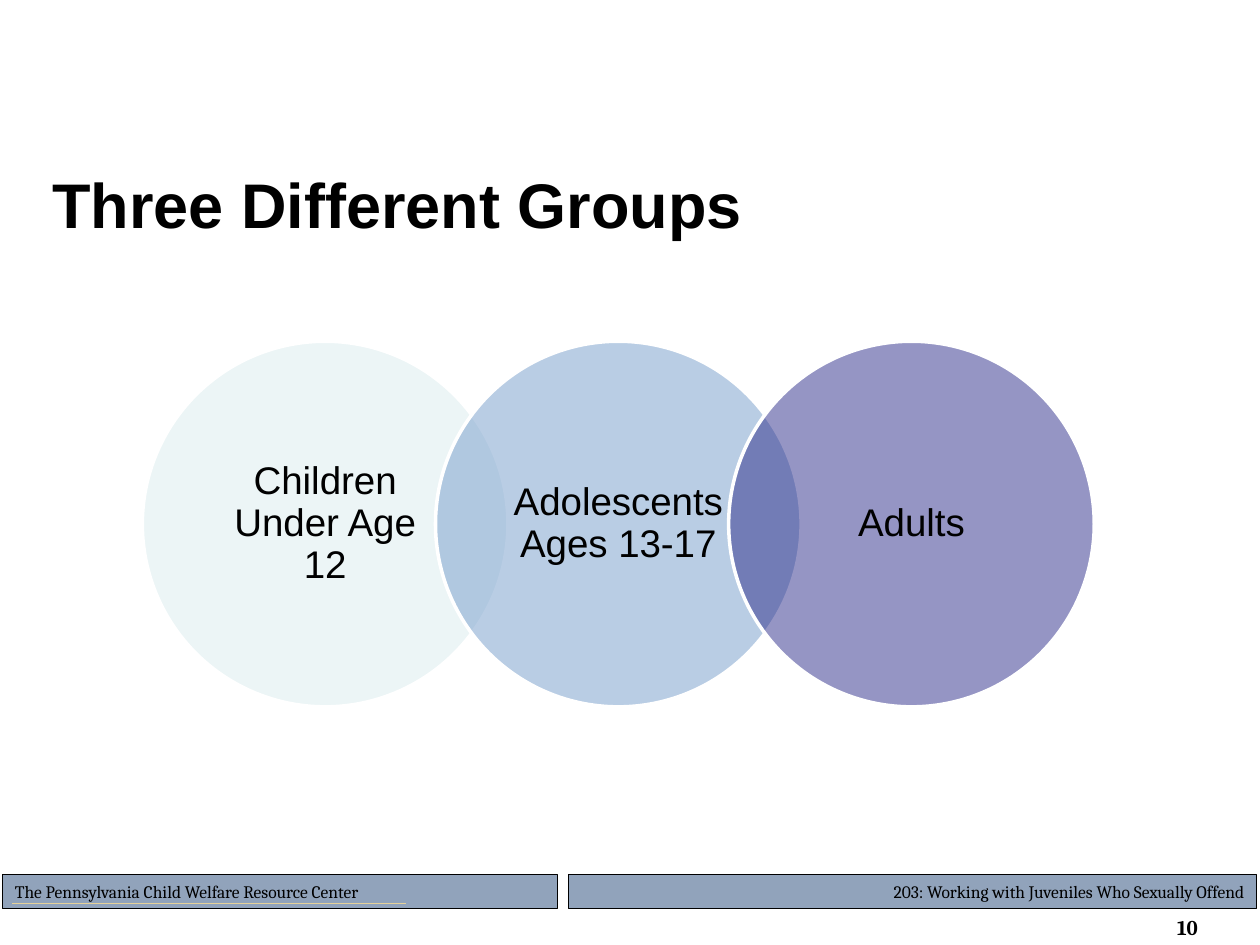
from math import sqrt

from lxml.etree import SubElement
from pptx import Presentation
from pptx.dml.color import RGBColor
from pptx.enum.shapes import MSO_CONNECTOR, MSO_SHAPE
from pptx.enum.text import MSO_ANCHOR, PP_ALIGN
from pptx.oxml.ns import qn
from pptx.util import Cm, Pt

BLACK = RGBColor(0x00, 0x00, 0x00)
WHITE = RGBColor(0xFF, 0xFF, 0xFF)
SLATE = RGBColor(0x91, 0xA3, 0xBB)
SAND = RGBColor(0xE5, 0xD1, 0x99)
MINT = RGBColor(0xDA, 0xED, 0xEF)
BLUE = RGBColor(0x75, 0x9C, 0xCB)
INDIGO = RGBColor(0x2D, 0x2D, 0x8A)


class SlideBuilder:
    heading_font = "Arial"
    footer_font = "Cambria"

    def __init__(self, slide):
        self.s = slide

    def set_text(self, sp, text, font, size, bold=False, align=PP_ALIGN.LEFT,
                 anchor=MSO_ANCHOR.TOP):
        tf = sp.text_frame
        tf.word_wrap = True
        tf.vertical_anchor = anchor
        p = tf.paragraphs[0]
        p.text = text
        p.alignment = align
        p.font.name = font
        p.font.size = Pt(size)
        p.font.bold = bold
        p.font.color.rgb = BLACK
        return tf

    def text(self, x, y, w, h, *args, **style):
        sp = self.s.shapes.add_textbox(Cm(x), Cm(y), Cm(w), Cm(h))
        return self.set_text(sp, *args, **style)

    def shape(self, kind, x, y, w, h, fill, line, width):
        sp = self.s.shapes.add_shape(kind, Cm(x), Cm(y), Cm(w), Cm(h))
        sp.shadow.inherit = False
        sp.fill.solid()
        sp.fill.fore_color.rgb = fill
        sp.line.color.rgb = line
        sp.line.width = Pt(width)
        return sp

    def bar(self, x, w, text, align, width):
        sp = self.shape(MSO_SHAPE.RECTANGLE, x, 17.63, w, 0.69, SLATE, BLACK, width)
        self.set_text(sp, text, self.footer_font, 10, align=align)

    def line(self, x1, x2, y, color):
        c = self.s.shapes.add_connector(MSO_CONNECTOR.STRAIGHT,
                                        Cm(x1), Cm(y), Cm(x2), Cm(y))
        c.line.color.rgb = color
        c.line.width = Pt(0.75)
        SubElement(c._element.spPr, qn("a:effectLst"))

    def circle(self, x, y, d, fill, label):
        sp = self.shape(MSO_SHAPE.OVAL, x, y, d, d, fill, WHITE, 2)
        color = sp._element.spPr.find(qn("a:solidFill"))[0]
        SubElement(color, qn("a:alpha"), val="50000")
        # The label fills the square inscribed in the circle
        side = d / sqrt(2)
        gap = (d - side) / 2
        tf = self.text(x + gap, y + gap, side, side, label, self.heading_font, 22,
                       align=PP_ALIGN.CENTER, anchor=MSO_ANCHOR.MIDDLE)
        tf.margin_left = tf.margin_right = Cm(0.4)
        tf.margin_top = tf.margin_bottom = Cm(0.08)
        tf.paragraphs[0].line_spacing = 0.9


def main():
    prs = Presentation()
    prs.slide_width, prs.slide_height = Cm(25.4), Cm(19.05)
    b = SlideBuilder(prs.slides.add_slide(prs.slide_layouts[6]))

    # Footer
    b.bar(11.46, 13.87, "203: Working with Juveniles Who Sexually Offend",
          PP_ALIGN.RIGHT, 0.75)
    b.bar(0.05, 11.18, "The Pennsylvania Child Welfare Resource Center",
          PP_ALIGN.LEFT, 0.5)
    b.line(0.25, 8.18, 18.21, SAND)
    number = b.text(22.38, 18.31, 2.41, 0.76, "10", b.footer_font, 12,
                    bold=True, align=PP_ALIGN.RIGHT)
    number.margin_right = Cm(0.64)

    # Title
    b.text(0.81, 3.12, 18.39, 1.96, "Three Different Groups", b.heading_font, 36,
           bold=True, anchor=MSO_ANCHOR.MIDDLE)

    # Overlapping circles
    groups = [("Children Under Age 12", MINT),
              ("Adolescents Ages 13-17", BLUE),
              ("Adults", INDIGO)]
    for i, (label, fill) in enumerate(groups):
        b.circle(2.87 + i * 5.91, 6.88, 7.37, fill, label)

    prs.save("out.pptx")


if __name__ == "__main__":
    main()
